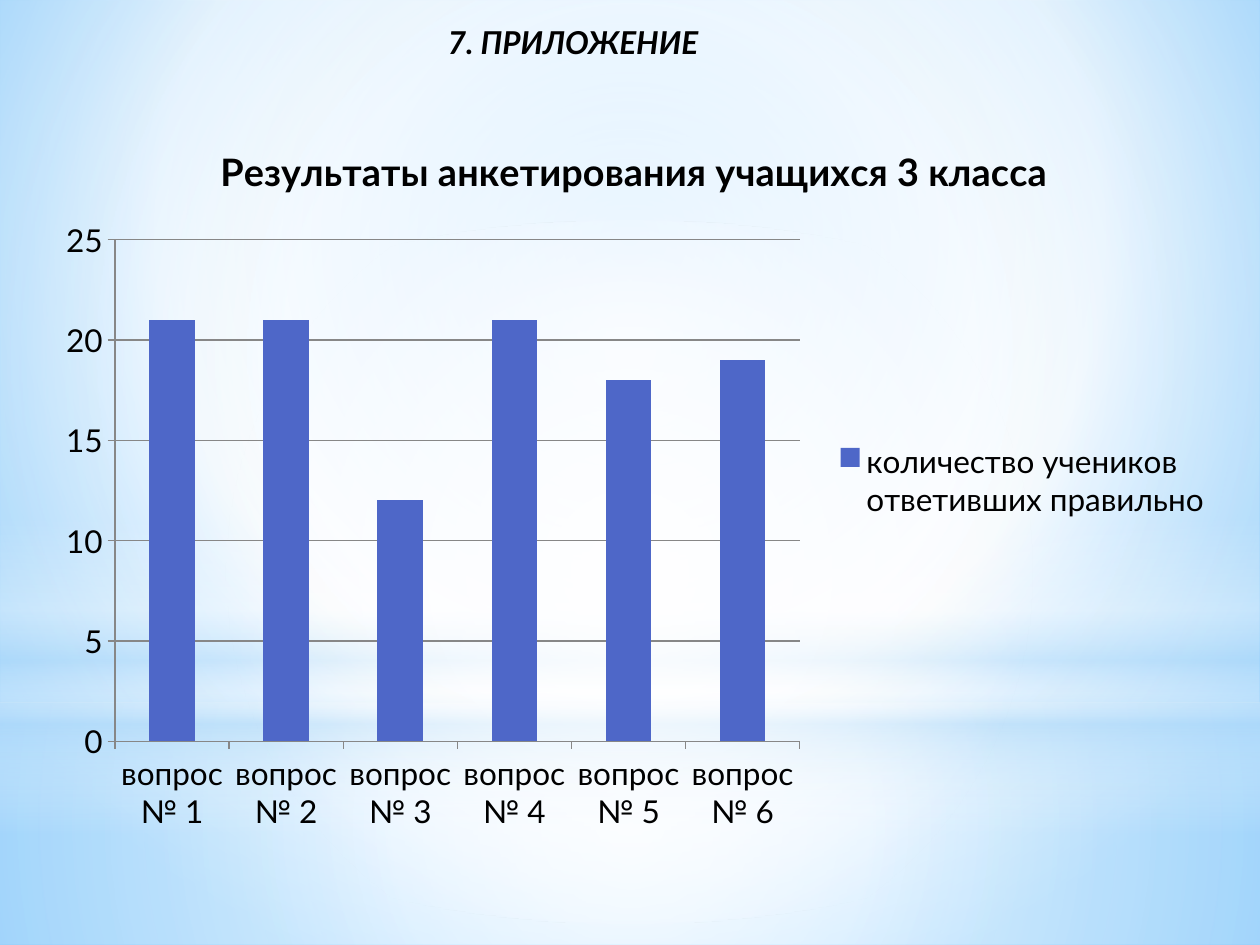
from lxml.etree import SubElement
from pptx import Presentation
from pptx.chart.data import CategoryChartData
from pptx.dml.color import RGBColor
from pptx.enum.chart import XL_CHART_TYPE as ChartType, XL_LEGEND_POSITION as LegendPosition, XL_TICK_MARK as TickMark
from pptx.enum.shapes import MSO_SHAPE as Shape
from pptx.enum.text import MSO_ANCHOR as Anchor, MSO_AUTO_SIZE as AutoSize, PP_ALIGN as Align
from pptx.oxml.ns import qn
from pptx.util import Cm, Pt

HEADING = "7. ПРИЛОЖЕНИЕ"
CHART_TITLE = "Результаты анкетирования учащихся 3 класса"
SERIES_NAME = "количество учеников\nответивших правильно"
CORRECT_ANSWERS = (21, 21, 12, 21, 18, 19)

THEME = {
    "font": "Lato", "size": Pt(18), "title_size": Pt(21.6),
    "text": "000000", "bar": "4E67C8", "grid": "878787",
    "white": "FFFFFF", "haze": "B4DCFA", "sky": "9ED5FF", "deep": "5BB9FF",
}
SLIDE_SIZE = (25.4, 19.05)
CENTRE = (50, 50, 50, 50)
BACKGROUND_STOPS = [(0, "sky", 100), (60, "white", 100), (100, "deep", 100)]
BACKGROUND_FOCUS = (20, 10, 20, 60)
GLOWS = [
    (Shape.RECTANGLE, (0, 14.17, 25.4, 4.88), CENTRE,
     [(0, "white", 91), (37, "white", 76), (100, "haze", 79)]),
    (Shape.RECTANGLE, (0, 0, 25.4, 14.17), CENTRE,
     [(0, "white", 89), (48, "white", 62), (100, "haze", 79)]),
    (Shape.RECTANGLE, (0, 10.46, 25.4, 6.35), None,
     [(0, "white", 0), (29, "white", 30), (45, "haze", 40),
      (55, "white", 26), (65, "haze", 60), (100, "white", 0)]),
    (Shape.OVAL, (0, 4.45, 25.4, 14.17), CENTRE,
     [(0, "white", 100), (56, "white", 0)]),
]
CHART_BOX = (0.89, 2.34, 23.8, 14.66)
PLOT_LAYOUT = {"x": 0.06, "y": 0.17, "w": 0.58, "h": 0.69}
HEADING_BOX = (8.71, 0.33, 5.69, 1.02)


def theme_color(name):
    return RGBColor.from_string(THEME[name])


def set_gradient(owner, element, stops, focus):
    """Fill with a radial gradient, or a vertical one when focus is None."""
    owner.fill.gradient()
    gradient = next(element.iter(qn("a:gradFill")))
    gradient.clear()
    gradient.set("rotWithShape", "1")
    stop_list = SubElement(gradient, qn("a:gsLst"))
    for position, name, opacity in stops:
        stop = SubElement(stop_list, qn("a:gs"), pos=str(position * 1000))
        color = SubElement(stop, qn("a:srgbClr"), val=THEME[name])
        if opacity < 100:
            SubElement(color, qn("a:alpha"), val=str(opacity * 1000))
    if focus:
        radial = SubElement(gradient, qn("a:path"), path="circle")
        sides = {side: str(value * 1000) for side, value in zip("ltrb", focus)}
        SubElement(radial, qn("a:fillToRect"), **sides)
    else:
        SubElement(gradient, qn("a:lin"), ang="5400000", scaled="0")


def style_font(font, size=THEME["size"], bold=False, italic=False):
    font.name = THEME["font"]
    font.size = size
    font.bold = bold
    font.italic = italic
    font.color.rgb = theme_color("text")


def style_line(line):
    line.color.rgb = theme_color("grid")
    line.width = Pt(0.75)


def add_backdrop(slide):
    set_gradient(slide.background, slide.element, BACKGROUND_STOPS, BACKGROUND_FOCUS)
    for preset, box, focus, stops in GLOWS:
        shape = slide.shapes.add_shape(preset, *map(Cm, box))
        shape.shadow.inherit = False
        shape.line.fill.background()
        set_gradient(shape, shape.element, stops, focus)


def add_results_chart(slide):
    data = CategoryChartData()
    data.categories = [f"вопрос № {number}" for number in range(1, len(CORRECT_ANSWERS) + 1)]
    data.add_series(SERIES_NAME, CORRECT_ANSWERS)
    chart = slide.shapes.add_chart(ChartType.COLUMN_CLUSTERED, *map(Cm, CHART_BOX), data).chart
    style_font(chart.font)

    title = chart.chart_title.text_frame
    title.text = CHART_TITLE
    style_font(title.paragraphs[0].font, THEME["title_size"], bold=True)
    chart.chart_title.include_in_layout = False

    chart.has_legend = True
    chart.legend.position = LegendPosition.RIGHT
    chart.legend.include_in_layout = False
    style_font(chart.legend.font)

    for axis in (chart.category_axis, chart.value_axis):
        axis.major_tick_mark = TickMark.OUTSIDE
        axis.minor_tick_mark = TickMark.NONE
        style_line(axis.format.line)
        style_font(axis.tick_labels.font)
    chart.value_axis.minimum_scale = 0
    chart.value_axis.maximum_scale = 25
    chart.value_axis.major_unit = 5
    chart.value_axis.has_major_gridlines = True
    style_line(chart.value_axis.major_gridlines.format.line)

    plot = chart.plots[0]
    plot.gap_width = 150
    plot.vary_by_categories = False
    bars = plot.series[0].format.fill
    bars.solid()
    bars.fore_color.rgb = theme_color("bar")
    set_plot_layout(chart)


def set_plot_layout(chart):
    plot_area = next(chart.element.iter(qn("c:plotArea")))
    for old_layout in plot_area.findall(qn("c:layout")):
        plot_area.remove(old_layout)
    layout = SubElement(plot_area, qn("c:layout"))
    plot_area.insert(0, layout)
    manual = SubElement(layout, qn("c:manualLayout"))
    settings = {"layoutTarget": "inner", "xMode": "edge", "yMode": "edge", **PLOT_LAYOUT}
    for name, value in settings.items():
        SubElement(manual, qn(f"c:{name}"), val=str(value))


def add_heading(slide):
    frame = slide.shapes.add_textbox(*map(Cm, HEADING_BOX)).text_frame
    frame.word_wrap = False
    frame.auto_size = AutoSize.SHAPE_TO_FIT_TEXT
    frame.vertical_anchor = Anchor.TOP
    paragraph = frame.paragraphs[0]
    paragraph.text = HEADING
    paragraph.alignment = Align.CENTER
    style_font(paragraph.font, bold=True, italic=True)


def main():
    presentation = Presentation()
    presentation.slide_width, presentation.slide_height = map(Cm, SLIDE_SIZE)
    slide = presentation.slides.add_slide(presentation.slide_layouts[6])
    add_backdrop(slide)
    add_results_chart(slide)
    add_heading(slide)
    presentation.save("out.pptx")


if __name__ == "__main__":
    main()
